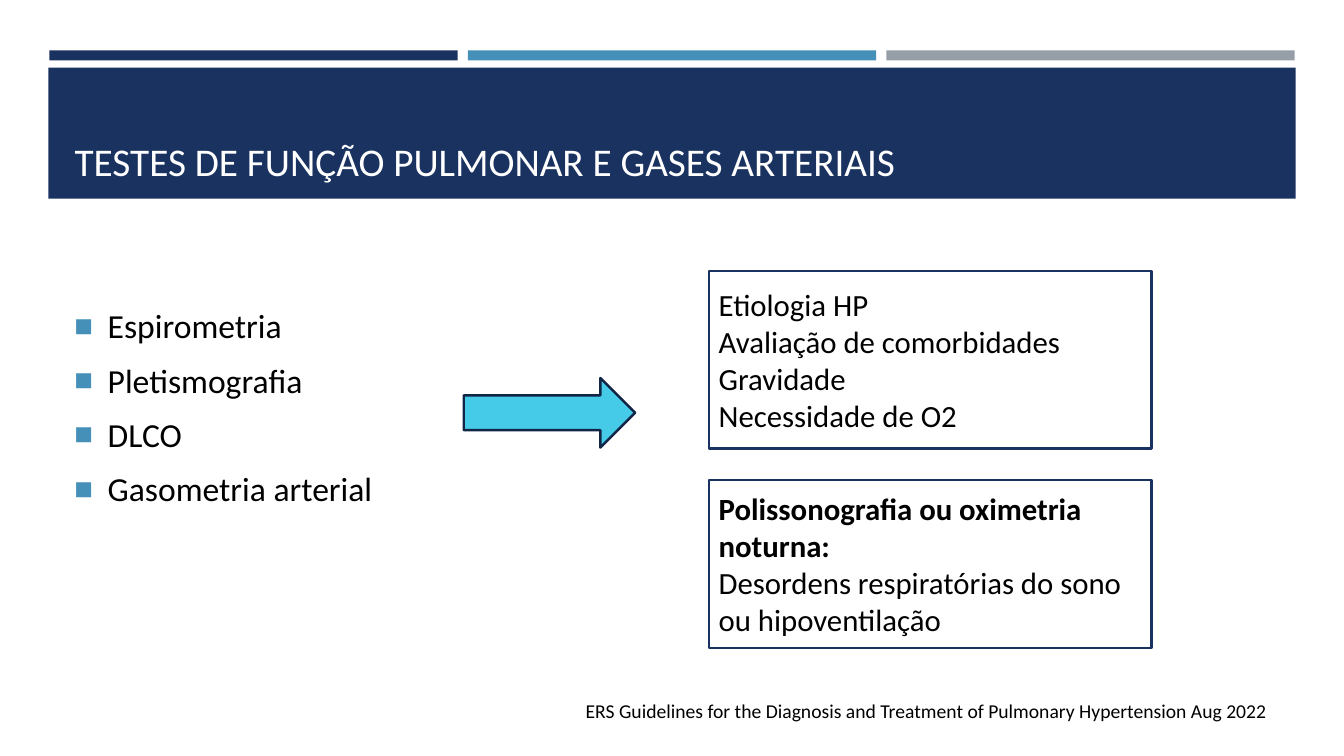
from dataclasses import dataclass

from lxml import etree
from pptx import Presentation
from pptx import util as u
from pptx.dml.color import RGBColor
from pptx.enum import shapes, text
from pptx.oxml.ns import qn

PX = 9144  # 100 px to the inch


@dataclass(frozen=True)
class Theme:
    font: str = "Calibri"
    navy: str = "1A3260"
    blue: str = "4590B8"
    gray: str = "969FA7"
    cyan: str = "45CBE8"
    outline: str = "132547"
    white: str = "FFFFFF"
    black: str = "000000"
    title_size: int = 28
    list_size: int = 24
    box_size: int = 22
    citation_size: int = 14
    line_width: float = 1.75


THEME = Theme()


def px(*lengths):
    return [u.Emu(length * PX) for length in lengths]


def add_block(slide, kind, box, fill, line=None):
    shape = slide.shapes.add_shape(kind, *px(*box))
    shape.shadow.inherit = False
    shape.fill.solid()
    shape.fill.fore_color.rgb = RGBColor.from_string(fill)
    if line:
        shape.line.color.rgb = RGBColor.from_string(line)
        shape.line.width = u.Pt(THEME.line_width)
    else:
        shape.line.fill.background()
    return shape


def write(shape, lines, size, color=THEME.black, anchor=text.MSO_ANCHOR.TOP,
          align=text.PP_ALIGN.LEFT, bold_lines=(), bullets=False):
    frame = shape.text_frame
    side, edge = px(10, 5)
    frame_format = {"word_wrap": True, "auto_size": text.MSO_AUTO_SIZE.NONE,
                    "vertical_anchor": anchor, "margin_left": side,
                    "margin_right": side, "margin_top": edge,
                    "margin_bottom": edge}
    for name, value in frame_format.items():
        setattr(frame, name, value)
    frame.text = "\n".join(lines)
    for index, paragraph in enumerate(frame.paragraphs):
        paragraph.alignment = align
        if bullets:
            add_bullet(paragraph)
            paragraph.space_before = u.Pt(4 if index else 0)
            paragraph.space_after = u.Pt(6)
        font_format = {"name": THEME.font, "size": u.Pt(size),
                       "bold": index in bold_lines}
        for run in paragraph.runs:
            for name, value in font_format.items():
                setattr(run.font, name, value)
            run.font.color.rgb = RGBColor.from_string(color)


def add_bullet(paragraph):
    properties = paragraph._p.get_or_add_pPr()
    indent, = px(33)
    properties.set("marL", str(indent))
    properties.set("indent", str(-indent))
    color = etree.SubElement(properties, qn("a:buClr"))
    etree.SubElement(color, qn("a:srgbClr"), val=THEME.blue)
    etree.SubElement(properties, qn("a:buSzPct"), val="92000")
    etree.SubElement(properties, qn("a:buFont"), typeface="Arial")
    etree.SubElement(properties, qn("a:buChar"), char="■")


def add_header(slide, box, title_text):
    left, top, width, height = box
    stripe_width, stripe_step = 405, 415
    for index, color in enumerate((THEME.navy, THEME.blue, THEME.gray)):
        stripe = (left + 1 + index * stripe_step, top, stripe_width, 10)
        add_block(slide, shapes.MSO_SHAPE.RECTANGLE, stripe, color)
    add_block(slide, shapes.MSO_SHAPE.RECTANGLE,
              (left, top + 17, width, height - 17), THEME.navy)
    title = slide.shapes.title
    title.element.getparent().append(title.element)  # in front of the band
    title.left, title.top, title.width, title.height = px(
        left + 16, top + 27, width - 31, height - 36)
    write(title, [title_text], THEME.title_size, THEME.white,
          anchor=text.MSO_ANCHOR.BOTTOM)


def add_tests(slide, box, tests):
    write(slide.shapes.add_textbox(*px(*box)), tests, THEME.list_size, bullets=True)


def add_purposes(slide, box, gap, purposes):
    """Stack outlined boxes, each given as (height, lines, bold_lines)."""
    left, top, width = box
    for height, lines, bold_lines in purposes:
        shape = add_block(slide, shapes.MSO_SHAPE.RECTANGLE,
                          (left, top, width, height), THEME.white, THEME.navy)
        write(shape, lines, THEME.box_size, anchor=text.MSO_ANCHOR.MIDDLE,
              bold_lines=bold_lines)
        top += height + gap


def add_citation(slide, box, citation):
    write(slide.shapes.add_textbox(*px(*box)), [citation], THEME.citation_size)


def main():
    presentation = Presentation()
    presentation.slide_width, presentation.slide_height = px(1333, 750)
    slide = presentation.slides.add_slide(presentation.slide_layouts[5])
    add_header(slide, (48, 50, 1237, 147),
               "TESTES DE FUNÇÃO PULMONAR E GASES ARTERIAIS")
    add_tests(slide, (64, 298, 380, 220),
              ["Espirometria", "Pletismografia", "DLCO", "Gasometria arterial"])
    add_block(slide, shapes.MSO_SHAPE.RIGHT_ARROW, (460, 375, 170, 69),
              THEME.cyan, THEME.outline)
    add_purposes(slide, (703, 269, 439), 31, [
        (176, ["Etiologia HP", "Avaliação de comorbidades", "Gravidade",
               "Necessidade de O2"], ()),
        (167, ["Polissonografia ou oximetria noturna:",
               "Desordens respiratórias do sono ou hipoventilação"], (0,)),
    ])
    add_citation(slide, (571, 688, 721, 34),
                 "ERS Guidelines for the Diagnosis and Treatment of "
                 "Pulmonary Hypertension Aug 2022")
    presentation.save("out.pptx")


if __name__ == "__main__":
    main()
